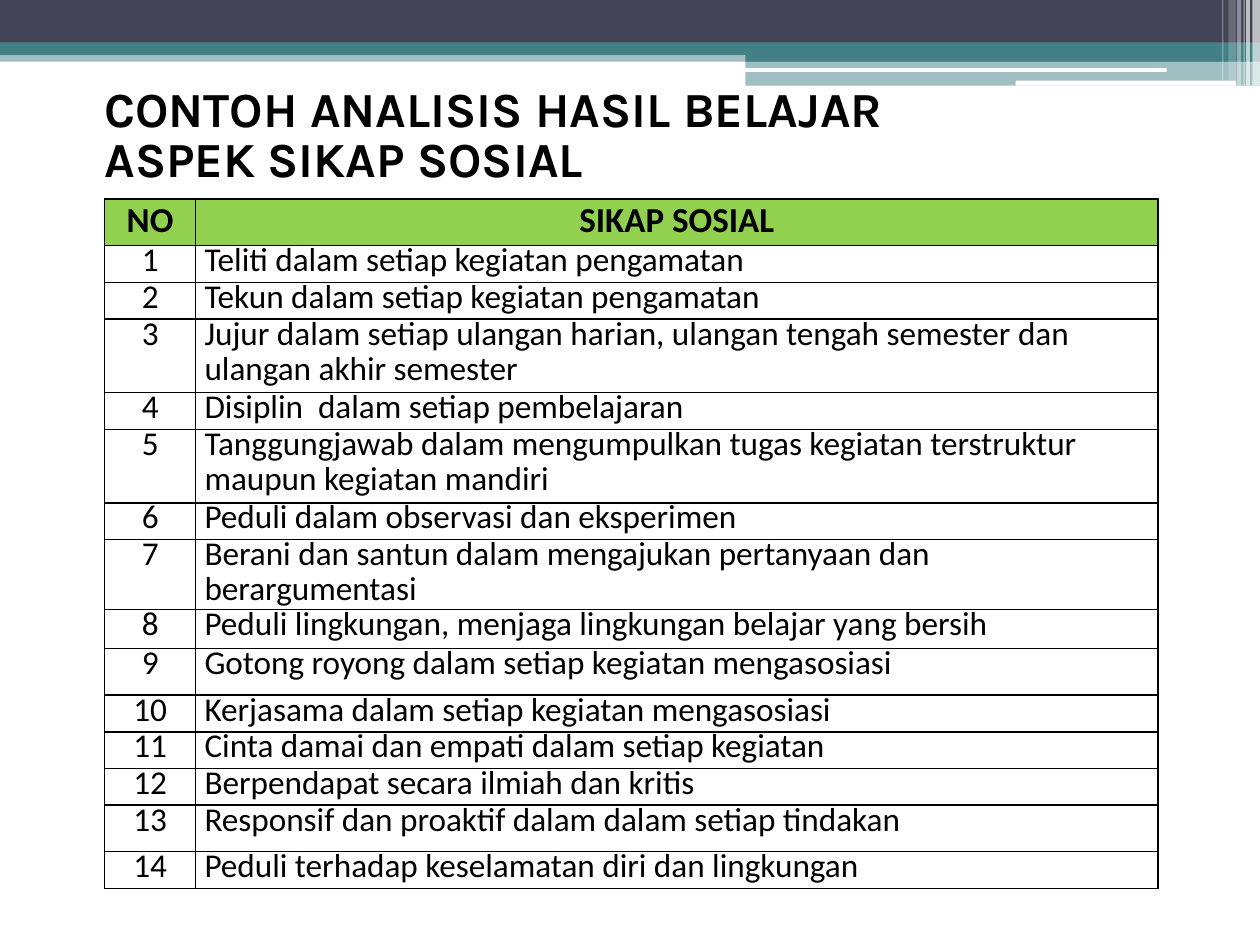
import pptx
import pptx.util
import pptx.dml.color
import pptx.enum.shapes
import pptx.enum.text
import pptx.oxml
import pptx.oxml.ns
import lxml.etree

Pt = pptx.util.Pt
Kind = pptx.enum.shapes.MSO_SHAPE
Align = pptx.enum.text.PP_ALIGN
qn = pptx.oxml.ns.qn


def tint(hue):
    return pptx.dml.color.RGBColor.from_string(hue)


def write(para, text, font, size, bold):
    run = para.add_run()
    run.text = text
    run.font.name = font
    run.font.size = Pt(size)
    run.font.bold = bold
    run.font.color.rgb = tint("000000")


deck = pptx.Presentation()
deck.slide_width = Pt(720)
deck.slide_height = Pt(540)
slide = deck.slides.add_slide(deck.slide_layouts[6])

bars = [
    (0, 28.8, 720, 6.5, "438086", 50),
    (0, 0, 720, 24.5, "424456", 100),
    (0, 24.2, 720, 7.2, "438086", 100),
    (426, 28.1, 294, 7.2, "438086", 100),
    (426, 34.6, 294, 14.4, "438086", 50),
    (425.5, 38.9, 241.2, 2.2, "FFFFFF", 100),
    (580.3, 46.1, 126, 2.9, "FFFFFF", 100),
    (715.7, 0, 4.3, 49, "FFFFFF", 65),
    (712.1, 0, 2.2, 49, "FFFFFF", 65),
    (710.6, 0, 0.7, 49, "FFFFFF", 60),
    (707, 0, 2.2, 49, "FFFFFF", 40),
    (702, 0, 4.3, 46.1, "FFFFFF", 20),
    (698.4, 0, 0.7, 46.1, "FFFFFF", 30),
]
for left, top, wide, high, hue, alpha in bars:
    solid = hue == "FFFFFF" and alpha == 100
    kind = Kind.ROUNDED_RECTANGLE if solid else Kind.RECTANGLE
    bar = slide.shapes.add_shape(kind, Pt(left), Pt(top), Pt(wide), Pt(high))
    bar.shadow.inherit = False
    bar.line.fill.background()
    bar.fill.solid()
    bar.fill.fore_color.rgb = tint(hue)
    if alpha < 100:
        node = bar.fill._xPr.find(".//" + qn("a:srgbClr"))
        lxml.etree.SubElement(node, qn("a:alpha"), val=str(alpha * 1000))

items = [
    "Teliti dalam setiap kegiatan pengamatan",
    "Tekun dalam setiap kegiatan pengamatan",
    "Jujur dalam setiap ulangan harian, ulangan tengah semester dan ulangan akhir semester",
    "Disiplin  dalam setiap pembelajaran",
    "Tanggungjawab dalam mengumpulkan tugas kegiatan terstruktur maupun kegiatan mandiri",
    "Peduli dalam observasi dan eksperimen",
    "Berani dan santun dalam mengajukan pertanyaan dan berargumentasi",
    "Peduli lingkungan, menjaga lingkungan belajar yang bersih",
    "Gotong royong dalam setiap kegiatan mengasosiasi",
    "Kerjasama dalam setiap kegiatan mengasosiasi",
    "Cinta damai dan empati dalam setiap kegiatan",
    "Berpendapat secara ilmiah dan kritis",
    "Responsif dan proaktif dalam dalam setiap tindakan",
    "Peduli terhadap keselamatan diri dan lingkungan",
]
rows = [("NO", "SIKAP SOSIAL")] + [(str(n), item) for n, item in enumerate(items, 1)]
tall = {0: 26.6, 3: 42, 5: 42, 7: 40, 8: 22.3, 9: 26.6, 13: 26.6}
sizes = [tall.get(n, 21) for n in range(len(rows))]

frame = slide.shapes.add_table(len(rows), 2, Pt(59.8), Pt(113.8), Pt(602), Pt(sum(sizes)))
table = frame.table
table.horz_banding = False
table.columns[0].width = Pt(52)
table.columns[1].width = Pt(550)
for r, row in enumerate(rows):
    table.rows[r].height = Pt(sizes[r])
    head = r == 0
    for c, text in enumerate(row):
        cell = table.cell(r, c)
        cell.margin_left = Pt(5.1)
        cell.margin_right = Pt(7) if c and not head else Pt(5.1)
        cell.margin_top = cell.margin_bottom = Pt(0)
        para = cell.text_frame.paragraphs[0]
        para.alignment = Align.CENTER if head or c == 0 else Align.LEFT
        if not head:
            para.line_spacing = Pt(20)
        write(para, text, "Calibri", 20 if head else 19, head)
        prop = cell._tc.get_or_add_tcPr()
        for side in ("a:lnL", "a:lnR", "a:lnT", "a:lnB"):
            edge = lxml.etree.SubElement(prop, qn(side), w=str(Pt(1)))
            fill = lxml.etree.SubElement(edge, qn("a:solidFill"))
            lxml.etree.SubElement(fill, qn("a:srgbClr"), val="000000")
        if head:
            cell.fill.solid()
            cell.fill.fore_color.rgb = tint("92D050")
        else:
            cell.fill.background()

title = slide.shapes.add_textbox(Pt(52.6), Pt(54.7), Pt(581.8), Pt(47.5))
title.text_frame.word_wrap = True
title.text_frame.vertical_anchor = pptx.enum.text.MSO_ANCHOR.MIDDLE
para = title.text_frame.paragraphs[0]
para.line_spacing = 0.85
write(para, "CONTOH ANALISIS HASIL BELAJAR", "Karla", 28, True)
para.add_line_break()
write(para, "ASPEK SIKAP SOSIAL", "Karla", 28, True)

deck.save("out.pptx")
